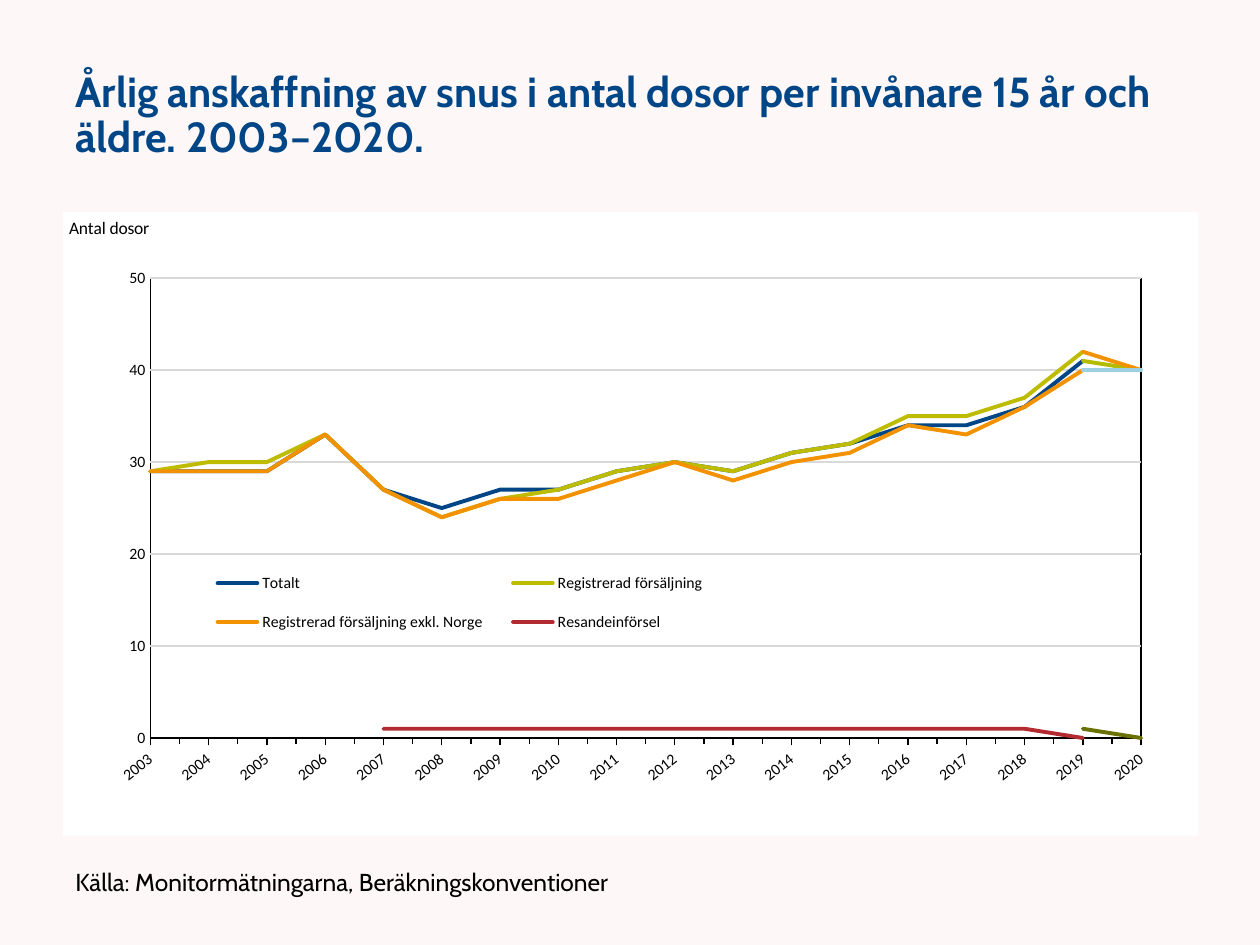
import dataclasses
from typing import Any

import lxml.etree
import pptx
import pptx.chart.data
import pptx.dml.color
import pptx.enum.chart
import pptx.enum.text
import pptx.oxml
import pptx.oxml.ns
import pptx.util

qn = pptx.oxml.ns.qn
COLUMNS, ROWS = 40, 30
CELL = pptx.util.Inches(0.25)


@dataclasses.dataclass(frozen=True)
class Theme:
    background: str = "FEF7F7"
    heading: str = "004687"
    text: str = "000000"
    panel: str = "FFFFFF"
    grid: str = "D9D9D9"
    display_font: str = "Cabin"
    chart_font: str = "Calibri"
    heading_size: float = 24
    source_size: float = 14
    unit_size: float = 10
    label_size: float = 9
    curve_width: float = 2.25
    rule_width: float = 0.75


@dataclasses.dataclass(frozen=True)
class Area:
    column: float
    row: float
    columns: float
    rows: float

    def box(self) -> list[int]:
        return [round(n * CELL) for n in (self.column, self.row, self.columns, self.rows)]


@dataclasses.dataclass(frozen=True)
class Curve:
    name: str
    color: str
    first_year: int
    values: tuple[int, ...]
    listed: bool = True


THEME = Theme()
HEADING = Area(2, 1.2, 36, 5)
PANEL = Area(2, 6.73, 36.04, 19.8)
SOURCE = Area(2, 27.3, 18, 1.48)
PLOT = Area(2.77, 2.1, 31.46, 14.6)
KEY = Area(4.1, 10.85, 17, 3.1)
UNIT = Area(0.09, 0.04, 0, 0)
YEARS = range(2003, 2021)
YEAR_TILT = -38
CURVES = (
    Curve("Totalt", "004687", 2003,
          (29, 29, 29, 33, 27, 25, 27, 27, 29, 30, 29, 31, 32, 34, 34, 36, 41)),
    Curve("Series 2", "B3BC00", 2019, (41, 40), False),
    Curve("Registrerad försäljning", "BEBC00", 2003,
          (29, 30, 30, 33, 27, 24, 26, 27, 29, 30, 29, 31, 32, 35, 35, 37, 42)),
    Curve("Series 4", "F29200", 2019, (42, 40), False),
    Curve("Registrerad försäljning exkl. Norge", "F29200", 2003,
          (29, 29, 29, 33, 27, 24, 26, 26, 28, 30, 28, 30, 31, 34, 33, 36, 40)),
    Curve("Series 6", "9CD0E2", 2019, (40, 40), False),
    Curve("Resandeinförsel", "B32B31", 2007, (1,) * 12 + (0,)),
    Curve("Series 8", "6B7100", 2019, (1, 0), False),
)


def rgb(color: str) -> pptx.dml.color.RGBColor:
    return pptx.dml.color.RGBColor.from_string(color)


def assign(target: Any, formats: dict[str, Any]) -> None:
    for attribute, value in formats.items():
        setattr(target, attribute, value)


def set_font(font: Any, name: str, size: float, color: str, bold: bool = False) -> None:
    assign(font, {"name": name, "size": pptx.util.Pt(size), "bold": bold})
    font.color.rgb = rgb(color)


def set_line(line: Any, color: str, width: float) -> None:
    line.color.rgb = rgb(color)
    line.width = pptx.util.Pt(width)


def chart_element(tag: str, value: Any = None) -> Any:
    element = lxml.etree.Element(qn(tag))
    if value is not None:
        element.set("val", str(value))
    return element


def manual_layout(area: Area, inner: bool = False) -> Any:
    layout = chart_element("c:layout")
    manual = chart_element("c:manualLayout")
    layout.append(manual)
    if inner:
        manual.append(chart_element("c:layoutTarget", "inner"))
    shares = {"x": area.column / PANEL.columns, "y": area.row / PANEL.rows}
    if area.columns:
        shares |= {"w": area.columns / PANEL.columns, "h": area.rows / PANEL.rows}
    for side in "xy":
        manual.append(chart_element(f"c:{side}Mode", "edge"))
    for side, share in shares.items():
        manual.append(chart_element(f"c:{side}", round(share, 4)))
    return layout


def drop(parent: Any, tag: str) -> None:
    for element in parent.findall(qn(tag)):
        parent.remove(element)


def chart_format(fill: str, line: str) -> Any:
    return pptx.oxml.parse_xml(
        f'<c:spPr {pptx.oxml.ns.nsdecls("c", "a")}>{fill}<a:ln w="9525">{line}</a:ln></c:spPr>')


def solid(color: str) -> str:
    return f'<a:solidFill><a:srgbClr val="{color}"/></a:solidFill>'


def write_text(frame: Any, text: str, size: float, color: str, bold: bool = False) -> None:
    assign(frame, {"text": text, "word_wrap": True,
                   "auto_size": pptx.enum.text.MSO_AUTO_SIZE.NONE,
                   "vertical_anchor": pptx.enum.text.MSO_ANCHOR.MIDDLE})
    paragraph = frame.paragraphs[0]
    assign(paragraph, {"line_spacing": 0.9, "alignment": pptx.enum.text.PP_ALIGN.LEFT})
    set_font(paragraph.runs[0].font, THEME.display_font, size, color, bold)


def style_axes(chart: Any) -> None:
    marks = pptx.enum.chart.XL_TICK_MARK
    years, doses = chart.category_axis, chart.value_axis
    assign(years, {"major_tick_mark": marks.OUTSIDE, "minor_tick_mark": marks.OUTSIDE,
                   "has_major_gridlines": False})
    assign(doses, {"minimum_scale": 0, "maximum_scale": 50, "major_unit": 10,
                   "major_tick_mark": marks.NONE, "has_major_gridlines": True})
    assign(doses.tick_labels, {"number_format": "0", "number_format_is_linked": False})
    for axis in (years, doses):
        set_font(axis.tick_labels.font, THEME.chart_font, THEME.label_size, THEME.text)
    tilt = str(YEAR_TILT * 60000)
    years._element.find(qn("c:txPr")).find(qn("a:bodyPr")).set("rot", tilt)
    set_line(years.format.line, THEME.text, THEME.rule_width)
    set_line(doses.major_gridlines.format.line, THEME.grid, THEME.rule_width)
    doses.format.line.fill.background()
    drop(doses._element, "c:crossBetween")
    doses._element.find(qn("c:crosses")).addnext(chart_element("c:crossBetween", "midCat"))

    unit = years.axis_title
    unit.text_frame.text = "Antal dosor"
    set_font(unit.text_frame.paragraphs[0].runs[0].font,
             THEME.chart_font, THEME.unit_size, THEME.text)
    drop(unit._element, "c:layout")
    unit._element.find(qn("c:overlay")).addprevious(manual_layout(UNIT))


def style_legend(chart: Any) -> None:
    chart.has_legend = True
    legend = chart.legend
    assign(legend, {"position": pptx.enum.chart.XL_LEGEND_POSITION.BOTTOM,
                    "include_in_layout": False})
    set_font(legend.font, THEME.chart_font, THEME.label_size, THEME.text)
    drop(legend._element, "c:layout")
    overlay = legend._element.find(qn("c:overlay"))
    for index, curve in enumerate(CURVES):
        if not curve.listed:
            entry = chart_element("c:legendEntry")
            entry.extend([chart_element("c:idx", index), chart_element("c:delete", 1)])
            overlay.addprevious(entry)
    overlay.addprevious(manual_layout(KEY))


def draw_chart(slide: Any) -> None:
    data = pptx.chart.data.CategoryChartData(number_format="0")
    data.categories = [str(year) for year in YEARS]
    for curve in CURVES:
        by_year = dict(enumerate(curve.values, curve.first_year))
        data.add_series(curve.name, [by_year.get(year) for year in YEARS])
    chart = slide.shapes.add_chart(
        pptx.enum.chart.XL_CHART_TYPE.LINE, *PANEL.box(), data).chart
    chart.has_title = False
    set_font(chart.font, THEME.display_font, THEME.unit_size, THEME.text)
    chart.plots[0].vary_by_categories = False
    for series, curve in zip(chart.plots[0].series, CURVES):
        series.smooth = False
        series.marker.style = pptx.enum.chart.XL_MARKER_STYLE.NONE
        set_line(series.format.line, curve.color, THEME.curve_width)
        series.format.line._get_or_add_ln().set("cap", "rnd")
    style_axes(chart)
    style_legend(chart)

    root = chart._chartSpace.find(qn("c:chart"))
    root.addnext(chart_format(solid(THEME.panel), "<a:noFill/>"))
    plot_area = root.find(qn("c:plotArea"))
    drop(plot_area, "c:layout")
    plot_area.insert(0, manual_layout(PLOT, inner=True))
    plot_area.append(chart_format("<a:noFill/>", solid(THEME.text)))


def main() -> None:
    deck = pptx.Presentation()
    assign(deck, {"slide_width": COLUMNS * CELL, "slide_height": ROWS * CELL})
    slide = deck.slides.add_slide(deck.slide_layouts[5])
    slide.background.fill.solid()
    slide.background.fill.fore_color.rgb = rgb(THEME.background)

    heading = slide.shapes.title
    assign(heading, dict(zip(("left", "top", "width", "height"), HEADING.box())))
    write_text(heading.text_frame,
               "Årlig anskaffning av snus i antal dosor per invånare 15 år och äldre. 2003–2020.",
               THEME.heading_size, THEME.heading, True)
    draw_chart(slide)
    source = slide.shapes.add_textbox(*SOURCE.box())
    write_text(source.text_frame, "Källa: Monitormätningarna, Beräkningskonventioner",
               THEME.source_size, THEME.text)
    deck.save("out.pptx")


if __name__ == "__main__":
    main()
